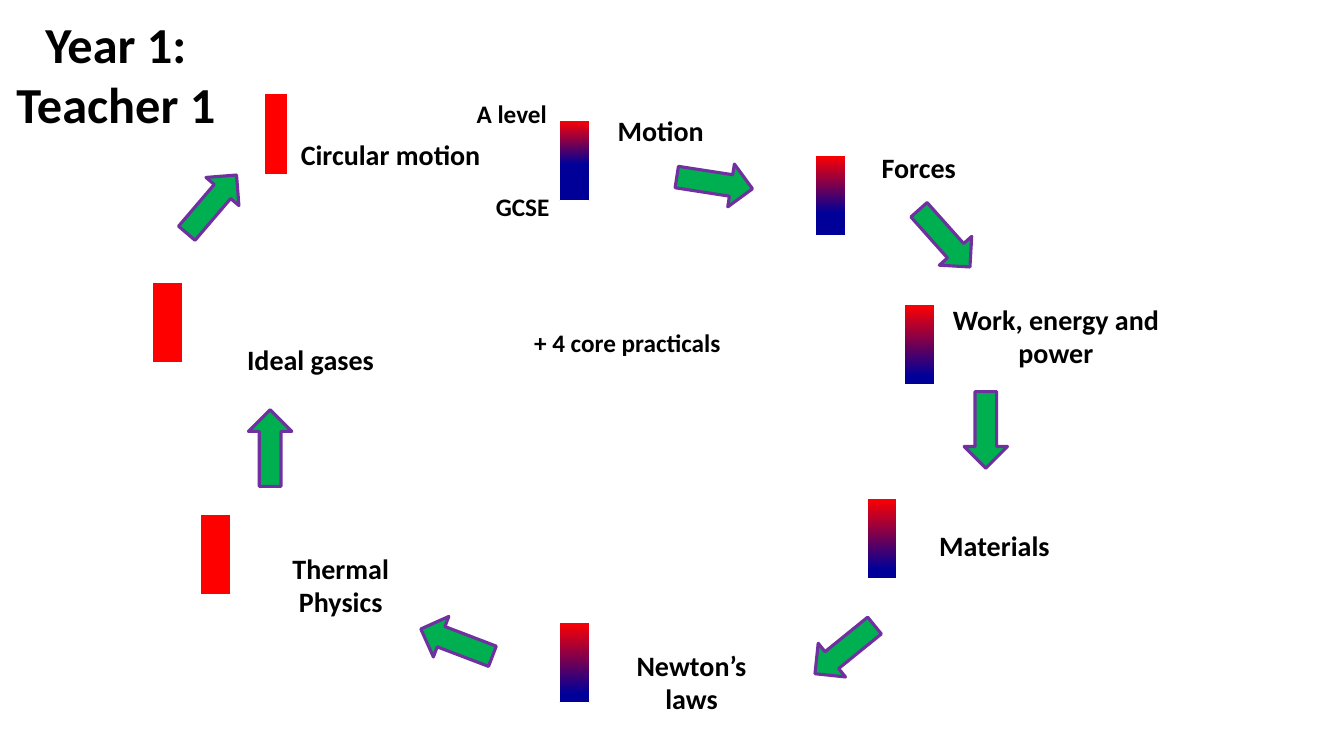
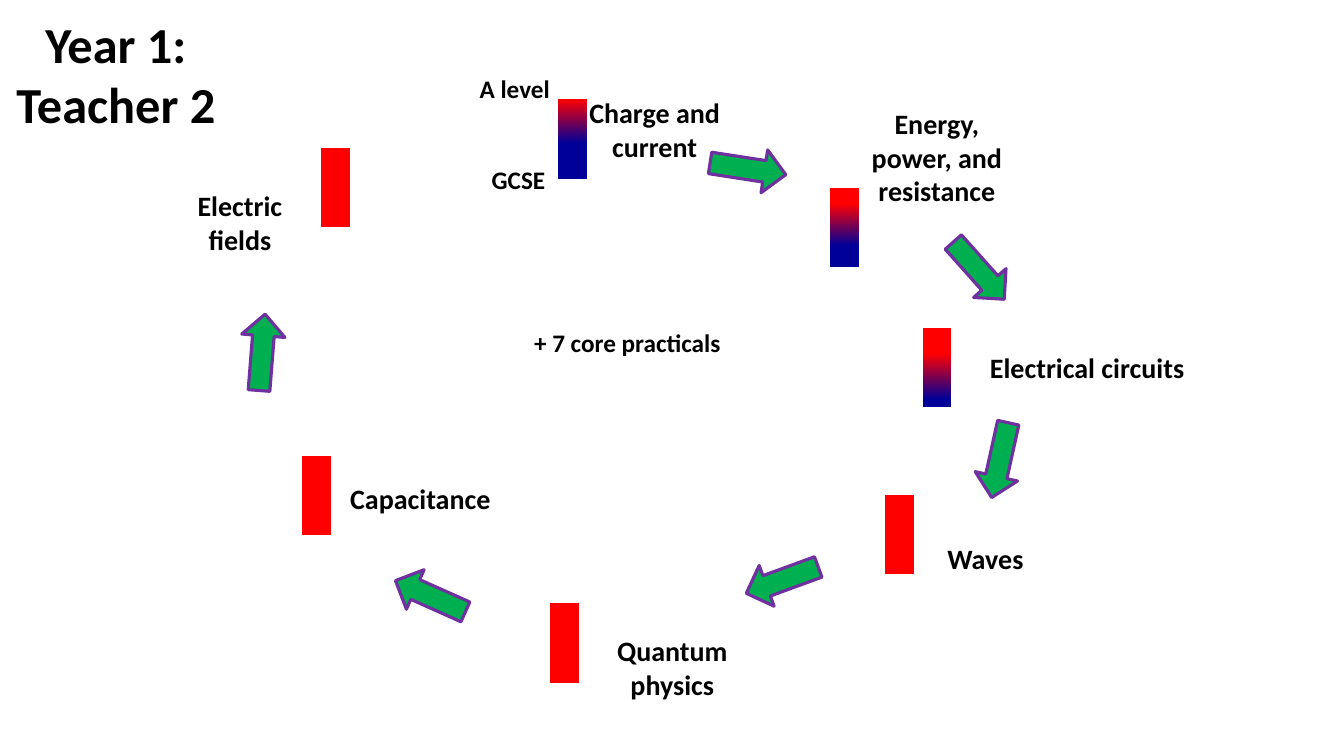
from dataclasses import dataclass

from pptx import Presentation
from pptx.dml.color import RGBColor
from pptx.enum.shapes import MSO_SHAPE as SHAPE
from pptx.enum.text import MSO_ANCHOR as ANCHOR, MSO_AUTO_SIZE as AUTOSIZE, PP_ALIGN as ALIGN
from pptx.util import Inches, Pt

# Shared style
FONT = "Calibri"
BLACK, WHITE = "000000", "FFFFFF"
RED, BLUE = "FF0000", "000099"
GREEN, PURPLE = "00B050", "7030A0"
TITLE_PT, TOPIC_PT, NOTE_PT = 36, 20, 18

# Grid: columns and rows of a tenth of an inch
CELL = 0.1
COLS, ROWS = 133.33, 75
BAR_W, BAR_H = 3, 8
ARROW_W, ARROW_H = 7.6, 4.3


@dataclass
class Topic:
    """One stop of the cycle, with places in grid columns and rows."""
    label: str
    box: tuple            # column, row, width
    bar: tuple            # column, row
    blend: tuple = None   # where red ends and blue starts, in percent
    arrow: tuple = None   # column, row, rotation
    lines: int = 1
    bar_w: float = BAR_W


@dataclass
class Cycle:
    teacher: str
    practicals: str
    a_level: tuple
    gcse: tuple
    topics: list


CYCLES = [
    Cycle("Teacher 1", "+ 4 core practicals", (46.3, 9.3), (48.2, 18.5), [
        Topic("Motion", (57.9, 10.8, 15.3), (55.5, 11.9), (0, 55), (67.1, 16, 8.8)),
        Topic("Forces", (83.5, 14.4, 15.3), (80.9, 15.4), (0, 72), (89.9, 21.5, 48.3)),
        Topic("Work, energy and power", (91.3, 29.5, 26.9), (89.7, 30.2), (0, 89),
              (94, 40.5, 90), lines=2),
        Topic("Materials", (85.2, 51.9, 26.9), (86, 49.4), (0, 89), (80, 62.3, 141)),
        Topic("Newton’s laws", (60.7, 63.8, 15.8), (55.5, 61.7), (0, 89),
              (41.5, 61.6, 200.9), lines=2),
        Topic("Thermal Physics", (25.9, 54.2, 15.8), (19.9, 51), None,
              (23, 42.3, 270), lines=2),
        Topic("Ideal gases", (22.9, 33.5, 15.8), (15.1, 28), None, (17.2, 18.1, 310.5)),
        Topic("Circular motion", (28.2, 13.1, 21.1), (26.2, 9.3), bar_w=2.3),
    ]),
    Cycle("Teacher 2", "+ 7 core practicals", (46.6, 6.8), (47.8, 15.8), [
        Topic("Charge and current", (57.3, 9, 15.3), (55.3, 9.8), (0, 55),
              (70.4, 14.6, 8.8), lines=2),
        Topic("Energy, power, and resistance", (85.3, 10.1, 15.3), (82.3, 18.6), (20, 72),
              (93.3, 24.7, 48.3), lines=3),
        Topic("Electrical circuits", (94.4, 34.3, 26.9), (91.5, 32.5), (32, 89),
              (95.4, 43.5, 102.5), bar_w=2.9),
        Topic("Waves", (84.3, 53.2, 26.9), (87.7, 49), None, (73.8, 55.4, 159.9)),
        Topic("Quantum physics", (58.8, 62.4, 15.8), (54.5, 59.8), None,
              (38.9, 57, 204.1), lines=2),
        Topic("Capacitance", (33.7, 47.3, 16), (29.9, 45.2), None, (22.2, 32.8, 274.5)),
        Topic("Electric fields", (15.9, 18.2, 15.8), (31.8, 14.6), lines=2),
    ]),
]


def color(value):
    return RGBColor.from_string(value)


def grid(*cells):
    return [Inches(n * CELL) for n in cells]


def write(p, text, size, align):
    p.alignment = align
    r = p.add_run()
    r.text = text
    r.font.name, r.font.size, r.font.bold = FONT, Pt(size), True
    r.font.color.rgb = color(BLACK)


def add_title(slide, lines):
    sp = slide.shapes.title
    sp.left, sp.top, sp.width, sp.height = grid(0.5, 0.8, 22, 13.1)
    tf = sp.text_frame
    tf.word_wrap, tf.auto_size = False, AUTOSIZE.NONE
    tf.vertical_anchor = ANCHOR.TOP
    for i, line in enumerate(lines):
        p = tf.add_paragraph() if i else tf.paragraphs[0]
        write(p, line, TITLE_PT, ALIGN.CENTER)


def add_text(slide, text, col, row, width, size=NOTE_PT, align=ALIGN.LEFT, lines=1):
    height = 1 + lines * size / 6
    tf = slide.shapes.add_textbox(*grid(col, row, width, height)).text_frame
    tf.word_wrap = True
    write(tf.paragraphs[0], text, size, align)


def add_shape(slide, kind, col, row, width, height, line, line_pt):
    sp = slide.shapes.add_shape(kind, *grid(col, row, width, height))
    sp.shadow.inherit = False
    sp.line.color.rgb, sp.line.width = color(line), Pt(line_pt)
    return sp


def add_bar(slide, col, row, width, blend):
    """Red for A level, running down to blue where GCSE is the start."""
    fill = add_shape(slide, SHAPE.RECTANGLE, col, row, width, BAR_H, WHITE, 1).fill
    if blend is None:
        fill.solid()
        fill.fore_color.rgb = color(RED)
        return
    fill.gradient()
    fill.gradient_angle = 270
    for stop, percent, tint in zip(fill.gradient_stops, blend, (RED, BLUE)):
        stop.position, stop.color.rgb = percent / 100, color(tint)


def add_arrow(slide, col, row, rotation):
    sp = add_shape(slide, SHAPE.RIGHT_ARROW, col, row, ARROW_W, ARROW_H, PURPLE, 2.25)
    sp.fill.solid()
    sp.fill.fore_color.rgb = color(GREEN)
    sp.rotation = rotation


def add_topic(slide, topic):
    add_text(slide, topic.label, *topic.box, TOPIC_PT, ALIGN.CENTER, topic.lines)
    add_bar(slide, *topic.bar, topic.bar_w, topic.blend)
    if topic.arrow:
        add_arrow(slide, *topic.arrow)


def add_cycle(prs, cycle):
    slide = prs.slides.add_slide(prs.slide_layouts[5])
    add_title(slide, ["Year 1:", cycle.teacher])
    for topic in cycle.topics:
        add_topic(slide, topic)
    # Key to the bars, and the note in the middle
    add_text(slide, "A level", *cycle.a_level, 16)
    add_text(slide, "GCSE", *cycle.gcse, 9.3)
    add_text(slide, cycle.practicals, 52, 32, 21.3)


def main():
    prs = Presentation()
    prs.slide_width, prs.slide_height = grid(COLS, ROWS)
    for cycle in CYCLES:
        add_cycle(prs, cycle)
    prs.save("out.pptx")


if __name__ == "__main__":
    main()
